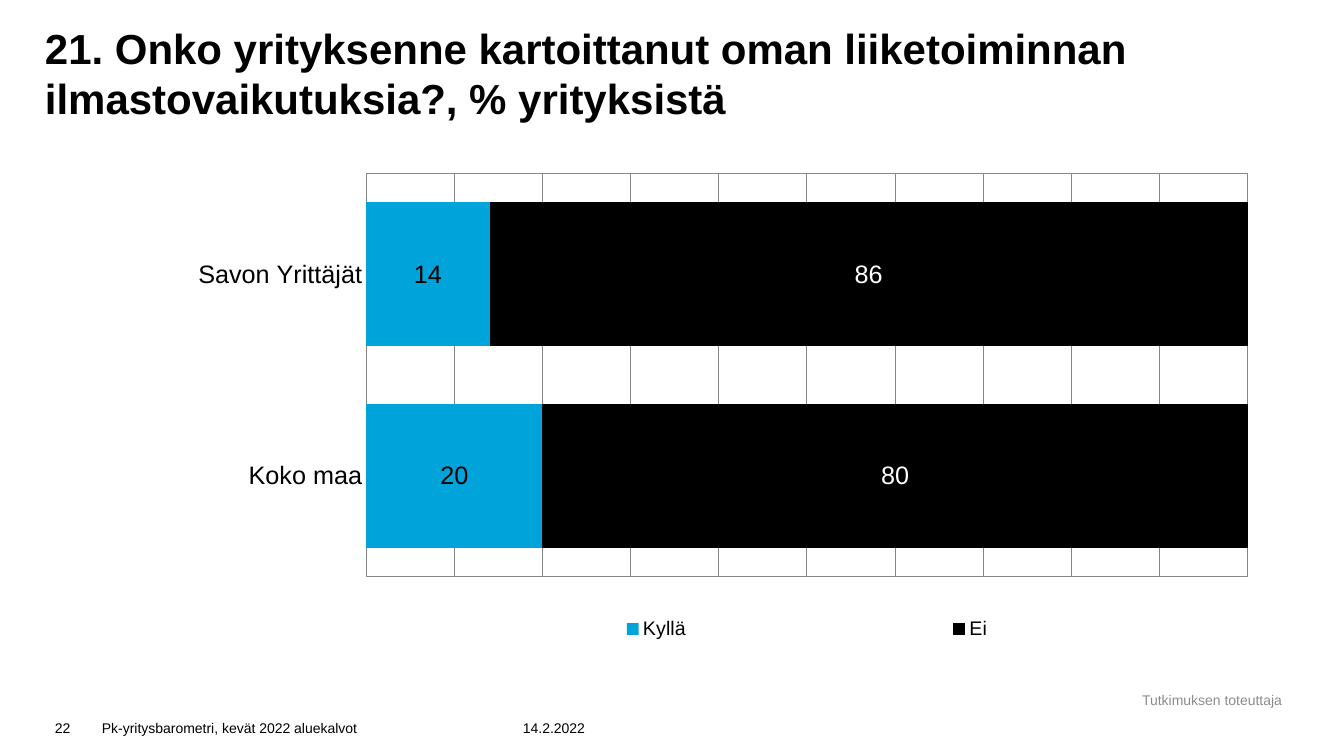
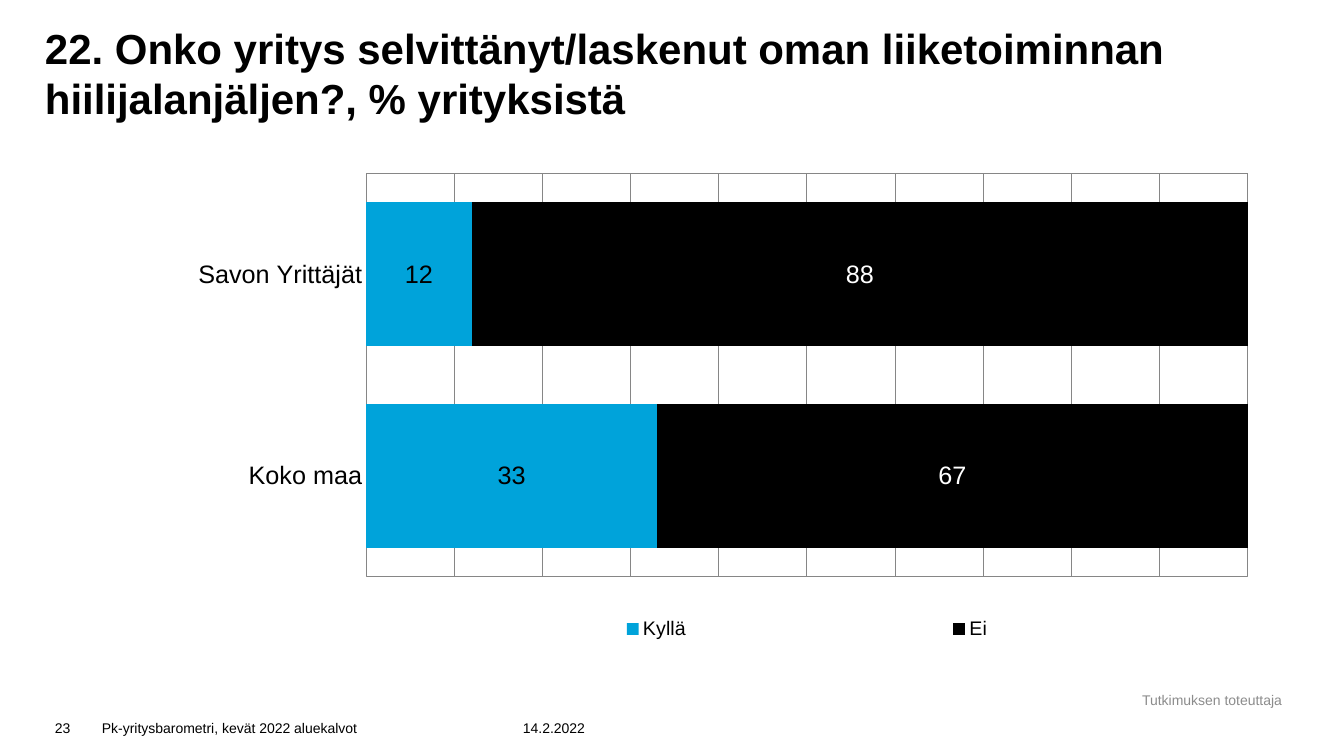
import pptx
import pptx.chart.data
import pptx.dml.color
import pptx.enum.chart
import pptx.enum.text
import pptx.oxml
import pptx.oxml.ns
import pptx.util

PX = 914400 / 100.8
FONT = "Arial"
BLACK, WHITE, BLUE, GREY, LINE = "000000", "FFFFFF", "00A3DA", "8C8C8C", "868686"
ANCHOR = pptx.enum.text.MSO_ANCHOR
ALIGN = pptx.enum.text.PP_ALIGN

GROUPS = ["Savon Yrittäjät", "Koko maa"]
ANSWERS = [("Kyllä", BLUE, BLACK), ("Ei", BLACK, WHITE)]
PLOT = (0.259, 0.034, 0.711, 0.781)
KEY = (0.259, 0.877, 0.711, 0.08)

SLIDES = [
    (22, "21. Onko yrityksenne kartoittanut oman liiketoiminnan "
         "ilmastovaikutuksia?, % yrityksistä", [(14, 20), (86, 80)]),
    (23, "22. Onko yritys selvittänyt/laskenut oman liiketoiminnan "
         "hiilijalanjäljen?, % yrityksistä", [(12, 33), (88, 67)]),
]


def emu(*sizes):
    return [pptx.util.Emu(round(size * PX)) for size in sizes]


def rgb(code):
    return pptx.dml.color.RGBColor.from_string(code)


def style(item, values):
    for name, value in values.items():
        setattr(item, name, value)


def ink(font, size, color=BLACK, bold=False):
    style(font, {"name": FONT, "size": pptx.util.Pt(size), "bold": bold})
    font.color.rgb = rgb(color)


def stroke(line):
    line.color.rgb = rgb(LINE)
    line.width = pptx.util.Pt(0.75)


def write(slide, box, text, size=10, color=BLACK, bold=False,
          anchor=ANCHOR.BOTTOM, align=ALIGN.LEFT, inset=None):
    frame = slide.shapes.add_textbox(*emu(*box)).text_frame
    style(frame, {"word_wrap": True, "vertical_anchor": anchor})
    if inset is not None:
        sides = ("left", "top", "right", "bottom")
        style(frame, {f"margin_{side}": inset for side in sides})
    para = frame.paragraphs[0]
    para.alignment = align
    run = para.add_run()
    run.text = text
    ink(run.font, size, color, bold)


def layout(box, inner=False):
    """Return a manual chart layout for fractions of the chart area."""
    target = '<c:layoutTarget val="inner"/>' if inner else ""
    modes = "".join(f'<c:{side}Mode val="edge"/>' for side in "xy")
    sizes = "".join(f'<c:{side} val="{part}"/>' for side, part in zip("xywh", box))
    return pptx.oxml.parse_xml(
        f'<c:layout {pptx.oxml.ns.nsdecls("c")}><c:manualLayout>'
        f'{target}{modes}{sizes}</c:manualLayout></c:layout>')


def clear(parent):
    for old in parent.findall(pptx.oxml.ns.qn("c:layout")):
        parent.remove(old)


def frame_plot(chart):
    """Place the plot area and give it a thin border."""
    area = chart._chartSpace.chart.plotArea
    clear(area)
    area.insert(0, layout(PLOT, True))
    area.append(pptx.oxml.parse_xml(
        f'<c:spPr {pptx.oxml.ns.nsdecls("c", "a")}><a:noFill/><a:ln w="9525">'
        f'<a:solidFill><a:srgbClr val="{LINE}"/></a:solidFill></a:ln></c:spPr>'))


def add_key(chart):
    chart.has_legend = True
    key = chart.legend
    style(key, {"position": pptx.enum.chart.XL_LEGEND_POSITION.RIGHT,
                "include_in_layout": False})
    ink(key.font, 14)
    clear(key._element)
    key._element.find(pptx.oxml.ns.qn("c:legendPos")).addnext(layout(KEY))


def set_axes(chart):
    ticks = pptx.enum.chart.XL_TICK_MARK.NONE
    groups, scale = chart.category_axis, chart.value_axis
    style(groups, {"reverse_order": True, "major_tick_mark": ticks,
                   "minor_tick_mark": ticks})
    ink(groups.tick_labels.font, 18)
    stroke(groups.format.line)
    style(scale, {"visible": False, "minimum_scale": 0, "maximum_scale": 100,
                  "major_unit": 10, "has_major_gridlines": True})
    stroke(scale.major_gridlines.format.line)


def add_bars(slide, box, shares):
    data = pptx.chart.data.CategoryChartData(number_format="#,##0")
    data.categories = GROUPS
    for (name, _, _), values in zip(ANSWERS, shares):
        data.add_series(name, values)
    kind = pptx.enum.chart.XL_CHART_TYPE.BAR_STACKED
    chart = slide.shapes.add_chart(kind, *emu(*box), data).chart
    chart.has_title = False
    ink(chart.font, 18)
    plot = chart.plots[0]
    style(plot, {"gap_width": 40, "overlap": 100, "vary_by_categories": False})
    for bars, (_, fill, color) in zip(plot.series, ANSWERS):
        bars.format.fill.solid()
        bars.format.fill.fore_color.rgb = rgb(fill)
        labels = bars.data_labels
        style(labels, {"show_value": True, "number_format": "#,##0",
                       "number_format_is_linked": False})
        ink(labels.font, 18, color)
    set_axes(chart)
    add_key(chart)
    frame_plot(chart)


def add_footer(slide, box, number):
    left, top, _, height = box
    write(slide, (left + 1080, top - 19, 174, 26), "Tutkimuksen toteuttaja",
          color=GREY, anchor=ANCHOR.MIDDLE, align=ALIGN.CENTER)
    parts = [(47, str(number)),
             (421, "Pk-yritysbarometri, kevät 2022 aluekalvot"),
             (88, "14.2.2022")]
    for width, text in parts:
        write(slide, (left, top, width, height), text)
        left += width


def add_slide(deck, number, title, shares):
    slide = deck.slides.add_slide(deck.slide_layouts[6])
    write(slide, (45, 0, 1240, 123), title, 30, bold=True, inset=0)
    add_bars(slide, (45, 156, 1240, 516), shares)
    add_footer(slide, (45, 706, 1240, 35), number)


def main():
    deck = pptx.Presentation()
    deck.slide_width, deck.slide_height = emu(1344, 756)
    for page in SLIDES:
        add_slide(deck, *page)
    deck.save("out.pptx")


if __name__ == "__main__":
    main()
